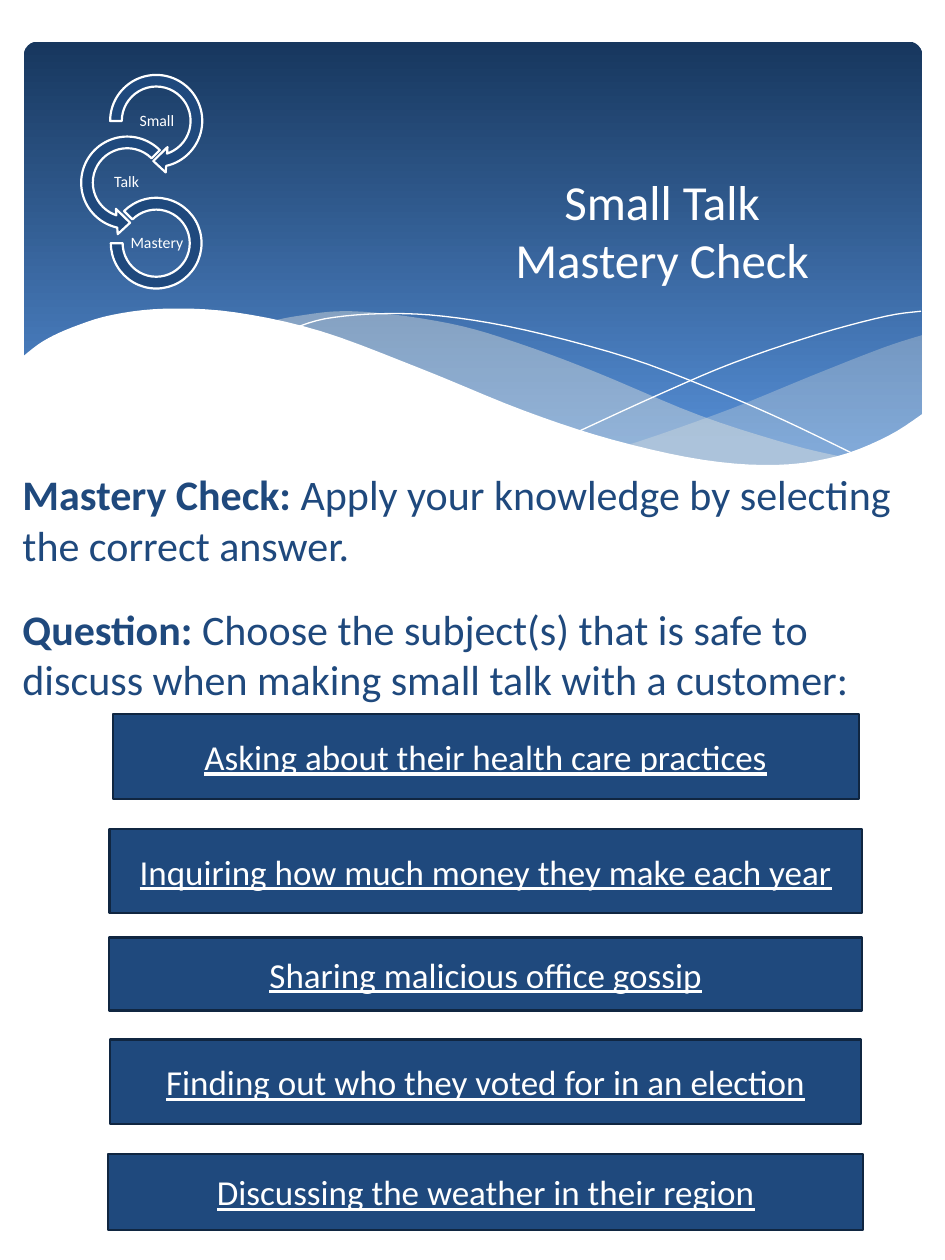
from dataclasses import dataclass

from lxml import etree
from pptx import Presentation
from pptx.dml.color import RGBColor
from pptx.enum.shapes import MSO_SHAPE
from pptx.enum.text import MSO_ANCHOR, PP_ALIGN
from pptx.oxml.ns import qn
from pptx.util import Inches, Pt

RECT, ROUNDED = MSO_SHAPE.RECTANGLE, MSO_SHAPE.ROUNDED_RECTANGLE
ARROW, LEFT_ARROW = MSO_SHAPE.CIRCULAR_ARROW, MSO_SHAPE.LEFT_CIRCULAR_ARROW
ARC = MSO_SHAPE.BLOCK_ARC
LEFT, CENTER = PP_ALIGN.LEFT, PP_ALIGN.CENTER
TOP, MIDDLE = MSO_ANCHOR.TOP, MSO_ANCHOR.MIDDLE


@dataclass(frozen=True)
class Theme:
    font: str = "Calibri"
    navy: str = "1F497D"
    edge: str = "102641"
    white: str = "FFFFFF"
    haze: str = "EEECE1"
    sky_top: str = "17375E"
    sky_bottom: str = "558ED5"
    title: int = 28
    body: int = 24
    answer: int = 20
    label: int = 9
    outline: float = 1.25


THEME = Theme()
COLS, ROWS = 75, 100
CELL = Inches(0.1)

# Boxes are left, top, width, height in grid cells.
HEADER = (1.9, 3.3, 71.3, 36)
WAVES = (1.7, 24.5, 71.6, 19.4)
EMBLEM = (5.9, 5.4, 10.7, 17.5)
TITLE = (31.7, 10.8, 41.7, 14.9)
PROMPT = (0.8, 36.7, 74.2, 18.8)
ANSWERS = (8.6, 56.7, 59.9, 40.9)

# Each wave is a list of edges; each edge is a list of knots inside WAVES.
RIGHT_WAVE = [
    [(71.5, 2.1), (68.4, 3.1), (62.8, 5.3), (56.7, 7.8), (51.2, 9.8), (47.9, 10.9)],
    [(47.9, 10.9), (52.2, 11.8), (58.5, 12.5), (65, 11.7), (69.5, 9.8), (71.5, 8.4)],
]
MIDDLE_WAVE = [
    [(65.3, 11.8), (61.1, 10.8), (53.9, 8.5), (45.5, 5), (39.9, 2.9),
     (35, 1.4), (29.8, 0.5), (25.4, 0.2), (21.8, 0.6), (19.8, 1)],
    [(19.8, 1), (25.5, 2.5), (32, 5), (40.8, 8.6), (48.2, 11),
     (54.4, 12.3), (60.4, 12.6), (65.3, 11.8)],
]
FALLING_LINE = [
    [(21.5, 1.6), (24.1, 0.8), (28.4, 0.4), (33.5, 0.6), (40, 1.7),
     (48.2, 3.9), (55.3, 6.6), (60.6, 8.9), (66.4, 11.7)],
]
RISING_LINE = [
    [(44.3, 9.7), (50.4, 6.9), (56.5, 4.3), (63.3, 2), (68.6, 0.6), (71.4, 0.2)],
]
FRONT_WAVE = [
    [(71.6, 8.3), (68.8, 10.1), (64.8, 11.7), (60, 12.4), (54.1, 12),
     (46.9, 10.4), (39.9, 8.1), (31.8, 4.8), (23.8, 1.8), (17, 0.3),
     (11.5, 0), (7.2, 0.5), (4, 1.5), (1.7, 2.6), (0, 3.9)],
    [(0, 19.4), (71.6, 19.4)],
]

# Text, width, top and height inside ANSWERS.
CHOICES = [
    ("Asking about their health care practices", 59.2, 0, 6.7),
    ("Inquiring how much money they make each year", 59.7, 9.1, 6.7),
    ("Sharing malicious office gossip", 59.8, 17.7, 5.8),
    ("Finding out who they voted for in an election", 59.6, 25.8, 6.7),
    ("Discussing the weather in their region", 59.9, 34.9, 6),
]


def rgb(code):
    return RGBColor.from_string(code)


def emu(*cells):
    return [round(c * CELL) for c in cells]


def inside(box, x, y, w, h):
    return box[0] + x, box[1] + y, w, h


def paint(s, fill=None, line=None, width=THEME.outline):
    s.shadow.inherit = False
    if fill:
        s.fill.solid()
        s.fill.fore_color.rgb = rgb(fill)
    else:
        s.fill.background()
    if line:
        s.line.color.rgb = rgb(line)
        s.line.width = Pt(width)
    else:
        s.line.fill.background()


def add_preset(slide, kind, box, adjustments=()):
    s = slide.shapes.add_shape(kind, *emu(*box))
    for i, value in enumerate(adjustments):
        s.adjustments[i] = value
    return s


def add_run(p, text, size, color, bold=False, underline=False):
    r = p.add_run()
    r.text = text
    r.font.name, r.font.size = THEME.font, Pt(size)
    r.font.color.rgb = rgb(color)
    r.font.bold, r.font.underline = bold, underline


def add_text(slide, box, anchor, align, inset=None):
    """Add a wrapping text box and return its first paragraph."""
    tf = slide.shapes.add_textbox(*emu(*box)).text_frame
    tf.word_wrap, tf.vertical_anchor = True, anchor
    if inset is not None:
        tf.margin_left = tf.margin_right = tf.margin_top = tf.margin_bottom = inset
    tf.paragraphs[0].alignment = align
    return tf.paragraphs[0]


def smooth(knots, steps=5):
    """Return points of a Catmull-Rom curve through the knots."""
    padded = [knots[0], *knots, knots[-1]]
    points = [knots[0]]
    for a, b, c, d in zip(padded, padded[1:], padded[2:], padded[3:]):
        for t in (i / steps for i in range(1, steps + 1)):
            points.append(tuple(
                (2 * q + (r - p) * t + (2 * p - 5 * q + 4 * r - s) * t**2
                 + (3 * q - p - 3 * r + s) * t**3) / 2
                for p, q, r, s in zip(a, b, c, d)))
    return points


def add_wave(slide, box, edges, fill=None, opacity=None, line=None):
    points = [emu(box[0] + x, box[1] + y) for edge in edges for x, y in smooth(edge)]
    builder = slide.shapes.build_freeform(*points[0])
    builder.add_line_segments(points[1:], close=fill is not None)
    s = builder.convert_to_shape()
    paint(s, fill, line, width=0)
    if opacity:
        color = s.fill._xPr.find(qn("a:solidFill"))[0]
        etree.SubElement(color, qn("a:alpha"), val=str(opacity * 1000))


def draw_header(slide, box):
    s = add_preset(slide, ROUNDED, box, [0.03])
    paint(s)
    s.fill.gradient()
    s.fill.gradient_angle = 270
    stops = ((0, THEME.sky_top), (0.9, THEME.sky_bottom))
    for stop, (position, color) in zip(s.fill.gradient_stops, stops):
        stop.position, stop.color.rgb = position, rgb(color)


def draw_waves(slide, box):
    add_wave(slide, box, RIGHT_WAVE, THEME.haze, opacity=29)
    add_wave(slide, box, MIDDLE_WAVE, THEME.haze, opacity=40)
    for curve in (FALLING_LINE, RISING_LINE):
        add_wave(slide, box, curve, line=THEME.white)
    add_wave(slide, box, FRONT_WAVE, THEME.white)


def draw_emblem(slide, box):
    rings = [
        ("Small", ARROW, (2.3, 0, 8.4, 8.4), [0.11, 11.42, 45, 108, 0.12], (4.2, 3.1)),
        ("Talk", LEFT_ARROW, (0, 4.9, 8.4, 8.4), [0.11, 11.42, 63, 189, 0.12], (1.8, 7.9)),
        ("Mastery", ARC, (2.9, 10.3, 7.2, 7.2), [135, 108, 0.13], (4.2, 12.8)),
    ]
    for text, kind, place, adjustments, corner in rings:
        paint(add_preset(slide, kind, inside(box, *place), adjustments),
              THEME.navy, THEME.white)
        p = add_text(slide, inside(box, *corner, 4.7, 2.3), MIDDLE, CENTER, Inches(0.01))
        p.line_spacing = 0.9
        add_run(p, text, THEME.label, THEME.white)


def draw_title(slide, box):
    p = add_text(slide, box, MIDDLE, CENTER)
    add_run(p, "Small Talk", THEME.title, THEME.white)
    p.add_line_break()
    add_run(p, "Mastery Check", THEME.title, THEME.white)


def draw_prompt(slide, box):
    p = add_text(slide, box, TOP, LEFT)
    add_run(p, "Mastery Check: ", THEME.body, THEME.navy, bold=True)
    add_run(p, "Apply your knowledge by selecting the correct answer.",
            THEME.body, THEME.navy)
    p = p._parent.add_paragraph()
    p.space_before = Pt(19.5)
    add_run(p, "Question: ", THEME.body, THEME.navy, bold=True)
    add_run(p, "Choose the subject(s) that is safe to discuss when making "
               "small talk with a customer:", THEME.body, THEME.navy)


def draw_answers(slide, box):
    for text, width, top, height in CHOICES:
        s = add_preset(slide, RECT, inside(box, (box[2] - width) / 2, top, width, height))
        paint(s, THEME.navy, THEME.edge)
        s.text_frame.vertical_anchor = MIDDLE
        p = s.text_frame.paragraphs[0]
        p.alignment = CENTER
        add_run(p, text, THEME.answer, THEME.white, underline=True)


def main():
    prs = Presentation()
    prs.slide_width, prs.slide_height = emu(COLS, ROWS)
    slide = prs.slides.add_slide(prs.slide_layouts[6])
    regions = [(draw_header, HEADER), (draw_waves, WAVES), (draw_prompt, PROMPT),
               (draw_title, TITLE), (draw_emblem, EMBLEM), (draw_answers, ANSWERS)]
    for draw, box in regions:
        draw(slide, box)
    prs.save("out.pptx")


if __name__ == "__main__":
    main()
